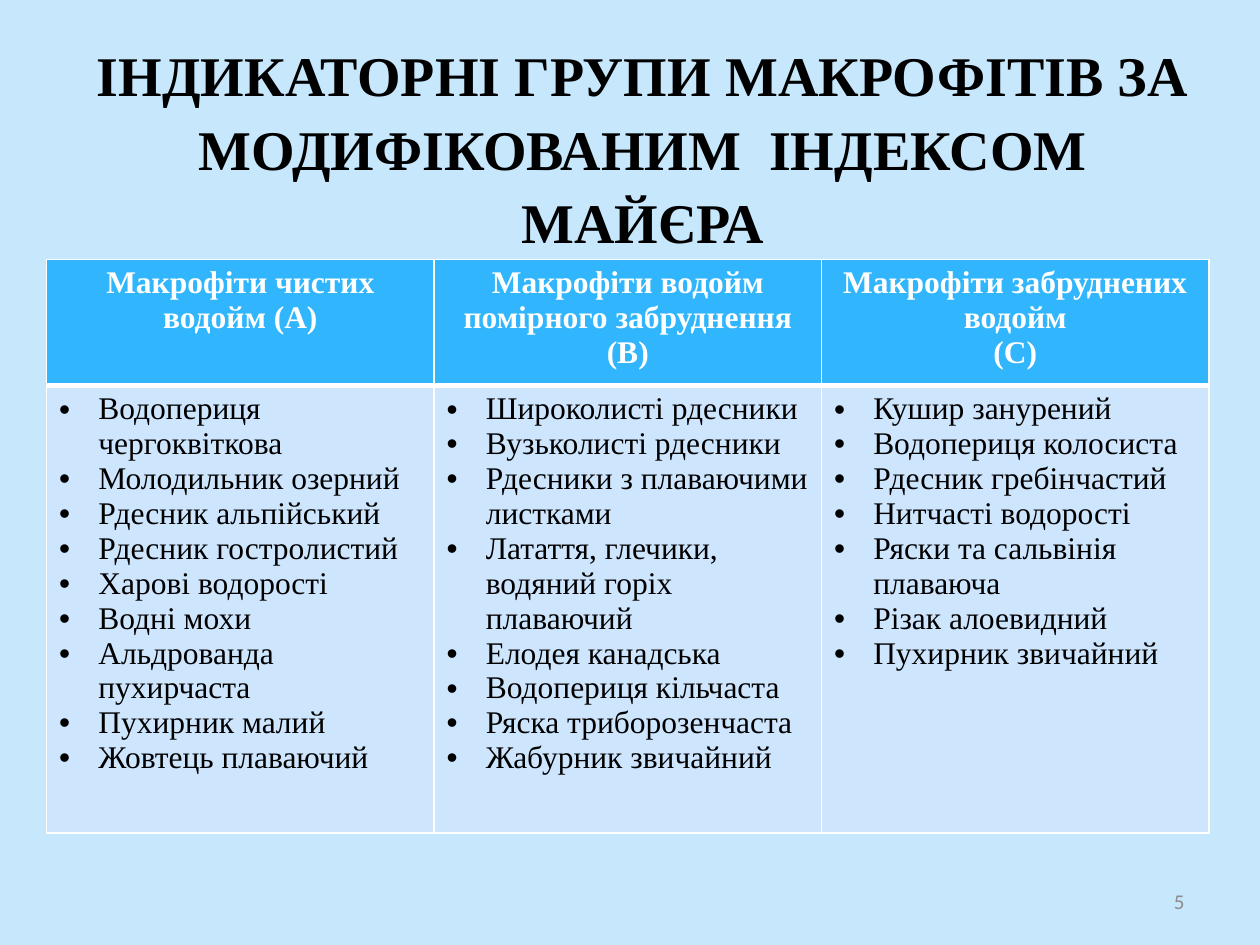
from lxml import etree
from pptx import Presentation
from pptx.dml.color import RGBColor
from pptx.enum import text
from pptx.oxml import ns
from pptx.util import Cm, Pt

TITLE = "ІНДИКАТОРНІ ГРУПИ МАКРОФІТІВ ЗА\vМОДИФІКОВАНИМ  ІНДЕКСОМ МАЙЄРА"
PAGE = "5"
GROUPS = [
    (["Макрофіти чистих водойм (А)"],
     ["Водопериця чергоквіткова", "Молодильник озерний", "Рдесник альпійський",
      "Рдесник гостролистий", "Харові водорості", "Водні мохи",
      "Альдрованда пухирчаста", "Пухирник малий", "Жовтець плаваючий"]),
    (["Макрофіти водойм помірного забруднення (В)"],
     ["Широколисті рдесники", "Вузьколисті рдесники",
      "Рдесники з плаваючими листками",
      "Латаття, глечики, водяний горіх плаваючий", "Елодея канадська",
      "Водопериця кільчаста", "Ряска триборозенчаста", "Жабурник звичайний"]),
    (["Макрофіти забруднених водойм", "(С)"],
     ["Кушир занурений", "Водопериця колосиста", "Рдесник гребінчастий",
      "Нитчасті водорості", "Ряски та сальвінія плаваюча",
      "Різак алоевидний", "Пухирник звичайний"]),
]
SERIF = "Times New Roman"
COL_W, ROW_H = 7.81, (2.34, 9.02)
INDENT = Cm(0.79)
ALIGN = text.PP_ALIGN


def rgb(value):
    return RGBColor.from_string(value)


def write(tf, lines, size=18, font=SERIF, color="000000", bold=False,
          align=ALIGN.LEFT, spacing=None, bullet=False):
    tf.word_wrap = True
    for i, line in enumerate(lines):
        p = tf.paragraphs[0] if i == 0 else tf.add_paragraph()
        p.text = line
        p.alignment = align
        if spacing:
            p.line_spacing = spacing
        for r in p.runs:
            r.font.size, r.font.name, r.font.bold = Pt(size), font, bold
            r.font.color.rgb = rgb(color)
        if bullet:
            pPr = p._p.get_or_add_pPr()
            pPr.set("marL", str(INDENT))
            pPr.set("indent", str(-INDENT))
            etree.SubElement(pPr, ns.qn("a:buFont")).set("typeface", "Arial")
            etree.SubElement(pPr, ns.qn("a:buChar")).set("char", "•")


def add_text(s, box, lines, anchor, **fmt):
    tf = s.shapes.add_textbox(*map(Cm, box)).text_frame
    tf.vertical_anchor = anchor
    write(tf, lines, **fmt)


def style_cell(cell, fill, top=1, bottom=1):
    tcPr = cell._tc.get_or_add_tcPr()
    for side, width in (("L", 1), ("R", 1), ("T", top), ("B", bottom)):
        ln = etree.SubElement(tcPr, ns.qn(f"a:ln{side}"), w=str(Pt(width)))
        solid = etree.SubElement(ln, ns.qn("a:solidFill"))
        etree.SubElement(solid, ns.qn("a:srgbClr"), val="FFFFFF")
    cell.fill.solid()
    cell.fill.fore_color.rgb = rgb(fill)


def add_groups(s):
    t = s.shapes.add_table(2, len(GROUPS), Cm(0.94), Cm(5.23),
                           Cm(COL_W * len(GROUPS)), Cm(sum(ROW_H))).table
    for row, height in zip(t.rows, ROW_H):
        row.height = Cm(height)
    for i, (heading, species) in enumerate(GROUPS):
        t.columns[i].width = Cm(COL_W)
        head, body = t.cell(0, i), t.cell(1, i)
        style_cell(head, "31B6FD", bottom=3)
        style_cell(body, "CEE5FE", top=3)
        write(head.text_frame, heading, color="FFFFFF", bold=True, align=ALIGN.CENTER)
        write(body.text_frame, species, bullet=True)


def main():
    prs = Presentation()
    prs.slide_width, prs.slide_height = Cm(25.4), Cm(19.05)
    s = prs.slides.add_slide(prs.slide_layouts[6])
    s.background.fill.solid()
    s.background.fill.fore_color.rgb = rgb("C6E7FC")
    add_text(s, (1.57, 0.58, 22.78, 3.78), [TITLE], text.MSO_ANCHOR.TOP,
             size=32, bold=True, align=ALIGN.CENTER, spacing=1.09)
    add_groups(s)
    add_text(s, (18.21, 17.65, 5.92, 1.02), [PAGE], text.MSO_ANCHOR.MIDDLE,
             size=12, font="Calibri", color="8C8C8C", align=ALIGN.RIGHT)
    prs.save("out.pptx")


if __name__ == "__main__":
    main()
